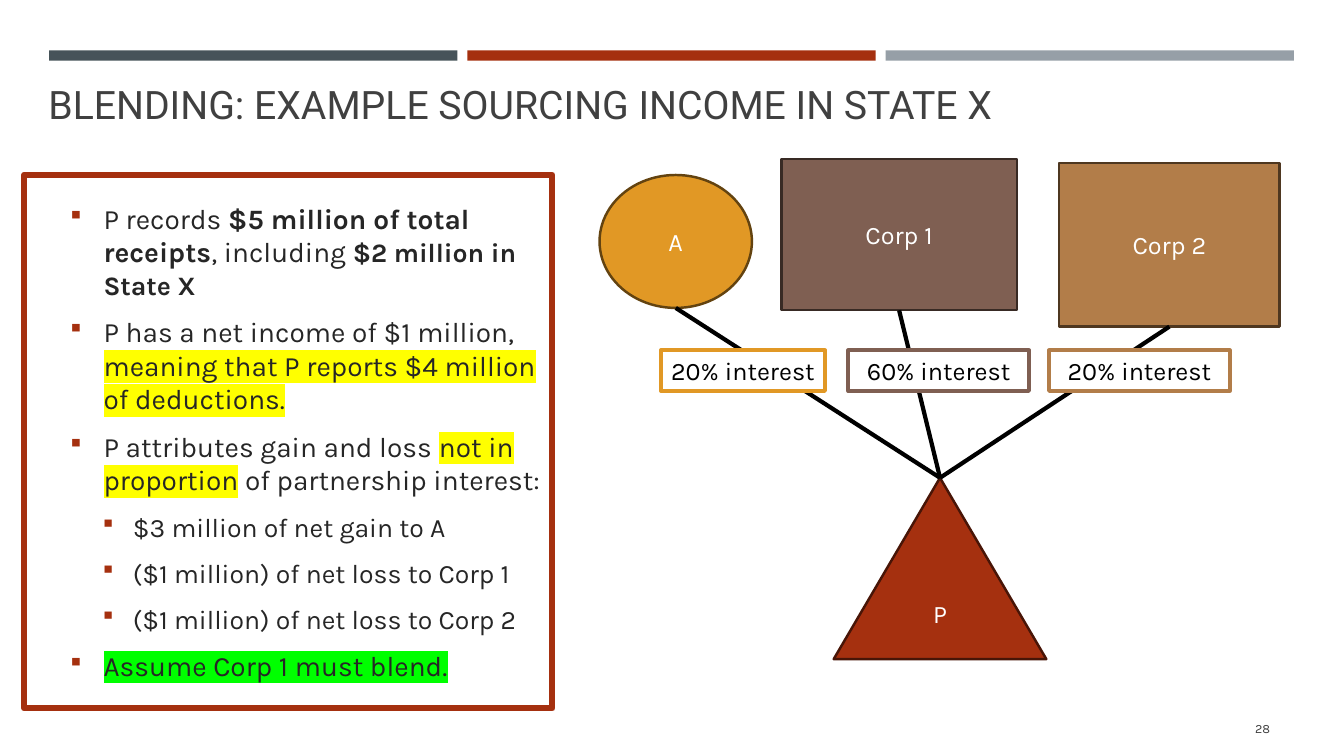
from dataclasses import dataclass
from typing import NamedTuple

from lxml import etree
from pptx import Presentation
from pptx.dml.color import RGBColor
from pptx.enum.shapes import MSO_CONNECTOR, MSO_SHAPE
from pptx.enum.text import MSO_ANCHOR, PP_ALIGN
from pptx.oxml.ns import qn
from pptx.util import Cm, Pt

RECTANGLE = MSO_SHAPE.RECTANGLE
OVAL = MSO_SHAPE.OVAL
TRIANGLE = MSO_SHAPE.ISOSCELES_TRIANGLE
STRAIGHT = MSO_CONNECTOR.STRAIGHT
TOP, MIDDLE, BOTTOM = MSO_ANCHOR.TOP, MSO_ANCHOR.MIDDLE, MSO_ANCHOR.BOTTOM
LEFT, CENTER, RIGHT = PP_ALIGN.LEFT, PP_ALIGN.CENTER, PP_ALIGN.RIGHT


@dataclass(frozen=True)
class Theme:
    """Colours, fonts and type sizes of the slide."""
    heading_font: str = "Roboto"
    body_font: str = "Karla"
    bullet_font: str = "Wingdings"
    title_size: int = 28
    body_size: int = 20
    detail_size: int = 19
    diagram_size: int = 18
    number_size: int = 9
    slate: str = "465359"
    rust: str = "A5300F"
    rust_edge: str = "481507"
    gray: str = "969FA7"
    amber: str = "E19825"
    amber_edge: str = "634310"
    brown: str = "7F5F52"
    brown_edge: str = "382A24"
    tan: str = "B27D49"
    tan_edge: str = "4E3720"
    heading: str = "404040"
    text: str = "262626"
    black: str = "000000"
    white: str = "FFFFFF"
    yellow: str = "FFFF00"
    green: str = "00FF00"


THEME = Theme()


class Box(NamedTuple):
    """A rectangle in centimetres."""
    left: float
    top: float
    width: float
    height: float

    def inner(self, left, top, width, height):
        """Return a box placed relative to this one."""
        return Box(self.left + left, self.top + top, width, height)

    def lengths(self):
        """Return the four lengths for python-pptx."""
        return [Cm(value) for value in self]


def add_text(paragraph, text, *, size, color, font=THEME.body_font, bold=False, highlight=None):
    """Append one formatted run to a paragraph."""
    run = paragraph.add_run()
    run.text = text
    run.font.size = Pt(size)
    run.font.bold = bold
    run.font.color.rgb = RGBColor.from_string(color)
    if highlight:
        mark = etree.Element(qn("a:highlight"))
        etree.SubElement(mark, qn("a:srgbClr"), val=highlight)
        run._r.get_or_add_rPr().find(qn("a:solidFill")).addnext(mark)
    run.font.name = font


def add_block(slide, box, kind=RECTANGLE, *, fill=None, line=None, line_width=1.75):
    """Add a preset shape with plain fill and outline."""
    shape = slide.shapes.add_shape(kind, *box.lengths())
    shape.shadow.inherit = False
    if fill:
        shape.fill.solid()
        shape.fill.fore_color.rgb = RGBColor.from_string(fill)
    else:
        shape.fill.background()
    if line:
        shape.line.color.rgb = RGBColor.from_string(line)
        shape.line.width = Pt(line_width)
    else:
        shape.line.fill.background()
    return shape


def first_paragraph(shape, *, anchor=MIDDLE, align=CENTER, side_margin=0.25):
    """Prepare the text frame of a shape and return its first paragraph."""
    frame = shape.text_frame
    frame.word_wrap = True
    frame.vertical_anchor = anchor
    frame.margin_left = frame.margin_right = Cm(side_margin)
    frame.paragraphs[0].alignment = align
    return frame.paragraphs[0]


def add_bullet(paragraph, level):
    """Give a paragraph a square bullet and the indent of its level."""
    margin, hanging = ((1.75, 0.84), (2.49, 0.76))[level]
    properties = paragraph._p.get_or_add_pPr()
    properties.set("marL", str(Cm(margin)))
    properties.set("indent", str(-Cm(hanging)))
    paragraph.level = level
    color = etree.SubElement(properties, qn("a:buClr"))
    etree.SubElement(color, qn("a:srgbClr"), val=THEME.rust)
    etree.SubElement(properties, qn("a:buSzPct"), val="92000")
    etree.SubElement(properties, qn("a:buFont"), typeface=THEME.bullet_font, charset="2")
    etree.SubElement(properties, qn("a:buChar"), char="§")


def draw_header(slide, box):
    """Draw the three colour bars and the title."""
    pitch = 10.64
    bar_width = 10.29
    pitch = (box.width - bar_width) / 2
    for index, color in enumerate((THEME.slate, THEME.rust, THEME.gray)):
        add_block(slide, box.inner(index * pitch, 0, bar_width, 0.26), fill=color)
    title = slide.shapes.add_textbox(*box.inner(-0.27, 0.39, 30.63, 1.68).lengths())
    add_text(first_paragraph(title, anchor=BOTTOM, align=LEFT),
             "BLENDING: EXAMPLE SOURCING INCOME IN STATE X",
             size=THEME.title_size, color=THEME.heading, font=THEME.heading_font)


def draw_facts(slide, box):
    """Draw the framed bullet list of facts."""
    bold, yellow = {"bold": True}, {"highlight": THEME.yellow}
    detail = {"size": THEME.detail_size}
    facts = [
        (0, [("P records ", {}), ("$5 million of total receipts", bold), (", including ", {}),
             ("$2 million in State X", bold | detail)]),
        (0, [("P has a net income of $1 million, ", {}),
             ("meaning that P reports $4 million of deductions.", yellow)]),
        (0, [("P attributes gain and loss ", {}), ("not in proportion", yellow),
             (" of partnership interest:", {})]),
        (1, [("$3 million of net gain to A", detail)]),
        (1, [("($1 million) of net loss to Corp 1", detail)]),
        (1, [("($1 million) of net loss to Corp 2", detail)]),
        (0, [("Assume Corp 1 must blend.", {"highlight": THEME.green})]),
    ]
    frame = add_block(slide, box, line=THEME.rust, line_width=4.5)
    paragraph = first_paragraph(frame, align=LEFT)
    for index, (level, runs) in enumerate(facts):
        if index:
            paragraph = frame.text_frame.add_paragraph()
            paragraph.alignment = LEFT
        add_bullet(paragraph, level)
        paragraph.space_before = Pt(4 if index else 0)
        paragraph.space_after = Pt(6)
        for text, style in runs:
            add_text(paragraph, text, **({"size": THEME.body_size, "color": THEME.text} | style))


def draw_entity(slide, box, kind, name, fill, line):
    """Draw one named party of the structure."""
    shape = add_block(slide, box, kind, fill=fill, line=line)
    add_text(first_paragraph(shape), name, size=THEME.diagram_size, color=THEME.white)


def draw_structure(slide, box):
    """Draw the partnership, its owners and their interests."""
    partnership = box.inner(5.9, 8.03, 5.36, 4.57)
    apex = partnership.left + partnership.width / 2
    draw_entity(slide, partnership, TRIANGLE, "P", THEME.rust, THEME.rust_edge)
    owners = [
        ("A", OVAL, (0, 0.4, 3.84, 3.35), THEME.amber, THEME.amber_edge, "20%", 1.55, 4.13),
        ("Corp 1", RECTANGLE, (4.58, 0, 5.94, 3.81), THEME.brown, THEME.brown_edge,
         "60%", 6.27, 4.55),
        ("Corp 2", RECTANGLE, (11.58, 0.1, 5.56, 4.12), THEME.tan, THEME.tan_edge,
         "20%", 11.33, 4.55),
    ]
    for name, kind, place, fill, edge, share, label_left, label_width in owners:
        owner = box.inner(*place)
        draw_entity(slide, owner, kind, name, fill, edge)
        connector = slide.shapes.add_connector(
            STRAIGHT, Cm(owner.left + owner.width / 2), Cm(owner.top + owner.height),
            Cm(apex), Cm(partnership.top))
        connector.line.color.rgb = RGBColor.from_string(THEME.black)
        connector.line.width = Pt(3)
        etree.SubElement(connector._element.spPr, qn("a:effectLst"))
        label = add_block(slide, box.inner(label_left, 4.82, label_width, 1.02),
                          fill=THEME.white, line=fill, line_width=3)
        add_text(first_paragraph(label, anchor=TOP, side_margin=0.1), f"{share} interest",
                 size=THEME.diagram_size, color=THEME.black)


def draw_number(slide, box):
    """Draw the slide number."""
    number = slide.shapes.add_textbox(*box.lengths())
    add_text(first_paragraph(number, align=RIGHT), "28",
             size=THEME.number_size, color=THEME.heading)


def main():
    """Build and save the presentation."""
    presentation = Presentation()
    presentation.slide_width, presentation.slide_height = Cm(33.87), Cm(19.05)
    slide = presentation.slides.add_slide(presentation.slide_layouts[6])
    draw_header(slide, Box(1.24, 1.27, 31.37, 2.09))
    draw_facts(slide, Box(0.61, 4.41, 13.31, 13.44))
    draw_structure(slide, Box(15.11, 4.01, 17.15, 12.6))
    draw_number(slide, Box(29.34, 17.84, 2.92, 1.02))
    presentation.save("out.pptx")


if __name__ == "__main__":
    main()
